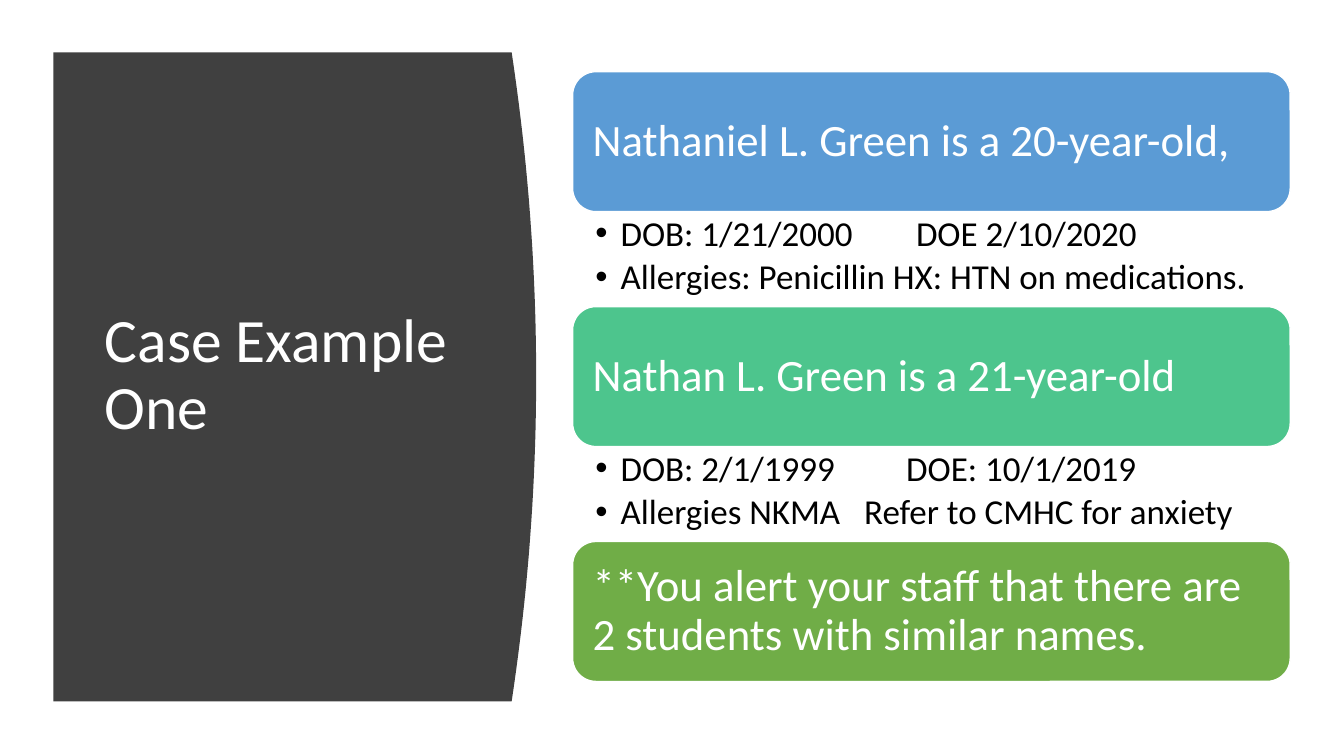
from lxml import etree
from pptx import Presentation
from pptx import util as u
from pptx.dml import color
from pptx.enum import shapes, text
from pptx.oxml import ns

Pt = u.Pt


def paint(target, shade):
    if hasattr(target, "solid"):
        target.solid()
        target = target.fore_color
    target.rgb = color.RGBColor.from_string(shade)


def write(frame, lines, size, shade, layout, spacing):
    for key, value in layout.items():
        setattr(frame, key, value)
    frame.text = "\n".join(lines)
    for line in frame.paragraphs:
        for key, value in spacing.items():
            setattr(line, key, value)
        for run in line.runs:
            run.font.name = "Calibri"
            run.font.size = Pt(size)
            paint(run.font.color, shade)


deck = Presentation()
deck.slide_width, deck.slide_height = Pt(960), Pt(540)
slide = deck.slides.add_slide(deck.slide_layouts[3])
heading, first_facts, second_facts = slide.placeholders

top, bottom, left, right, bulge = 37.4, 501, 38.2, 383, 17.5
steps = 40
curve = []
for step in range(steps + 1):
    offset = 2 * step / steps - 1
    curve.append((Pt(right - bulge * offset ** 2), Pt(top + (bottom - top) * step / steps)))
outline = slide.shapes.build_freeform(Pt(left), Pt(top))
outline.add_line_segments(curve + [(Pt(left), Pt(bottom))], close=True)
panel = outline.convert_to_shape()
panel.shadow.inherit = False
paint(panel.fill, "404040")
panel.line.fill.background()
slide.shapes._spTree.insert(2, panel._element)

heading.left, heading.top, heading.width, heading.height = Pt(67.7), Pt(79.9), Pt(268.6), Pt(377.3)
middle = {"word_wrap": True, "auto_size": text.MSO_AUTO_SIZE.NONE,
          "vertical_anchor": text.MSO_ANCHOR.MIDDLE}
flush = {"alignment": text.PP_ALIGN.LEFT, "line_spacing": 0.9,
         "space_before": Pt(0), "space_after": Pt(0)}
write(heading.text_frame, ["Case Example One"], 44, "FFFFFF", middle, flush)

card_left, card_top, card_width, card_height, pitch = 409, 51.2, 512.6, 100, 167.8
card_margins = {f"margin_{side}": Pt(9.4) for side in ("left", "top", "right", "bottom")}
cards = [
    ("Nathaniel L. Green is a 20-year-old,", "5B9BD5"),
    ("Nathan L. Green is a 21-year-old", "4DC58D"),
    ("**You alert your staff that there are 2 students with similar names.", "70AD47"),
]
for row, (statement, shade) in enumerate(cards):
    card = slide.shapes.add_shape(
        shapes.MSO_SHAPE.ROUNDED_RECTANGLE,
        Pt(card_left), Pt(card_top + row * pitch), Pt(card_width), Pt(card_height))
    card.shadow.inherit = False
    paint(card.fill, shade)
    paint(card.line.fill, "FFFFFF")
    card.line.width = Pt(1)
    write(card.text_frame, [statement], 32, "FFFFFF", middle | card_margins, flush)

facts_layout = {"word_wrap": True, "auto_size": text.MSO_AUTO_SIZE.NONE,
                "vertical_anchor": text.MSO_ANCHOR.TOP,
                "margin_left": Pt(16.3), "margin_right": Pt(17.8),
                "margin_top": Pt(3), "margin_bottom": Pt(3)}
facts = [
    (first_facts, [("DOB: 1/21/2000\tDOE 2/10/2020", 229),
                   ("Allergies: Penicillin HX: HTN on medications.", None)]),
    (second_facts, [("DOB: 2/1/1999\tDOE: 10/1/2019", 222),
                    ("Allergies NKMA\tRefer to CMHC for anxiety", 192)]),
]
for row, (box, lines) in enumerate(facts):
    box.left, box.top = Pt(card_left), Pt(card_top + card_height + row * pitch)
    box.width, box.height = Pt(card_width), Pt(pitch - card_height)
    write(box.text_frame, [line for line, stop in lines], 25, "000000",
          facts_layout, flush | {"space_after": Pt(4)})
    for paragraph, (line, stop) in zip(box.text_frame.paragraphs, lines):
        properties = paragraph._p.get_or_add_pPr()
        properties.set("marL", str(Pt(18)))
        properties.set("indent", str(-Pt(18)))
        if stop:
            stops = etree.SubElement(properties, ns.qn("a:tabLst"))
            etree.SubElement(stops, ns.qn("a:tab"), pos=str(Pt(stop)), algn="l")

deck.save("out.pptx")
